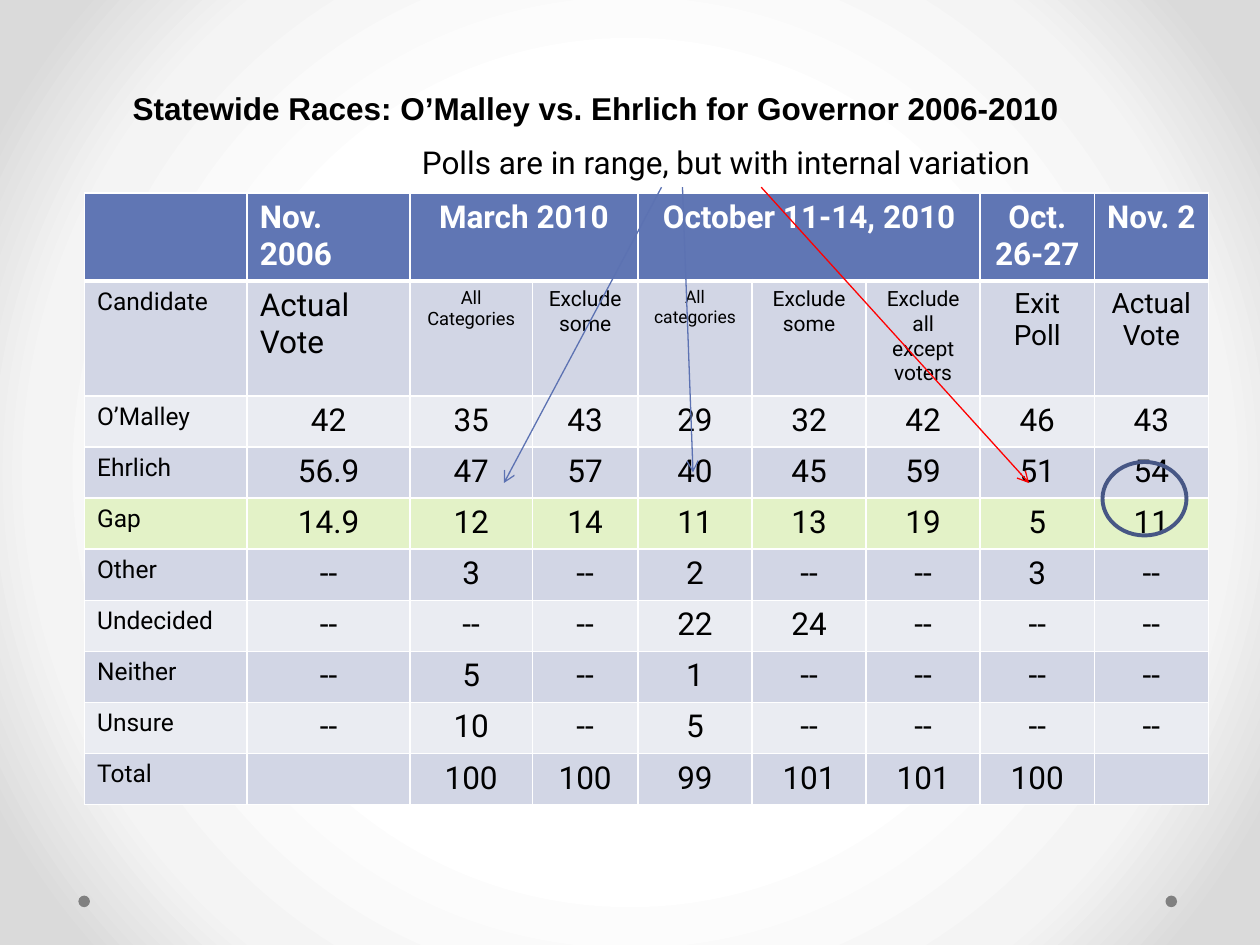
from lxml import etree
from pptx import Presentation
from pptx.dml.color import RGBColor
from pptx.enum import shapes, text
from pptx.oxml import ns, parse_xml
from pptx.util import Pt

BLACK = RGBColor(0x00, 0x00, 0x00)
WHITE = RGBColor(0xFF, 0xFF, 0xFF)
GREY = RGBColor(0x80, 0x80, 0x80)
HEADER = RGBColor(0x60, 0x76, 0xB4)
BAND_DARK = RGBColor(0xD2, 0xD6, 0xE5)
BAND_LIGHT = RGBColor(0xEA, 0xEC, 0xF2)
GAP_GREEN = RGBColor(0xE3, 0xF2, 0xC7)
BLUE = RGBColor(0x5C, 0x72, 0xB2)
RED = RGBColor(0xFF, 0x00, 0x00)
NAVY = RGBColor(0x47, 0x57, 0x85)

LEFT, CENTER = text.PP_ALIGN.LEFT, text.PP_ALIGN.CENTER

COLUMN_WIDTHS = [93, 93, 70, 60.3] + [65.2] * 5
ROW_HEIGHTS = [49.4, 65.6] + [29.2] * 8
HEADINGS = ["", "Nov. 2006", "March 2010", "", "October 11-14, 2010", "", "",
            "Oct. 26-27", "Nov. 2"]
SUBHEADINGS = ["Candidate", "Actual\nVote", "All Categories", "Exclude some",
               "All categories", "Exclude some", "Exclude all except voters",
               "Exit Poll", "Actual Vote"]
SUBHEADING_SIZES = [14, 18, 10.5, 12, 10, 12, 12, 16, 16]
RESULTS = [
    ["O’Malley", "42", "35", "43", "29", "32", "42", "46", "43"],
    ["Ehrlich", "56.9", "47", "57", "40", "45", "59", "51", "54"],
    ["Gap", "14.9", "12", "14", "11", "13", "19", "5", "11"],
    ["Other", "--", "3", "--", "2", "--", "--", "3", "--"],
    ["Undecided", "--", "--", "--", "22", "24", "--", "--", "--"],
    ["Neither", "--", "5", "--", "1", "--", "--", "--", "--"],
    ["Unsure", "--", "10", "--", "5", "--", "--", "--", "--"],
    ["Total", "", "100", "100", "99", "101", "101", "100", ""],
]


def write(frame, words, size=18, font="Roboto", color=BLACK, bold=False, align=LEFT):
    frame.text = words
    for para in frame.paragraphs:
        para.alignment = align
        for span in para.runs:
            span.font.size = Pt(size)
            span.font.name = font
            span.font.color.rgb = color
            span.font.bold = bold


def add_text(page, left, top, width, height, words, wrap=True, inset=3.6, **style):
    box = page.shapes.add_textbox(Pt(left), Pt(top), Pt(width), Pt(height))
    frame = box.text_frame
    frame.word_wrap = wrap
    frame.margin_top = Pt(inset)
    write(frame, words, **style)


def add_ellipse(page, left, top, width, height, fill=None, line=None):
    ellipse = page.shapes.add_shape(shapes.MSO_SHAPE.OVAL, Pt(left), Pt(top),
                                    Pt(width), Pt(height))
    ellipse.shadow.inherit = False
    if fill is None:
        ellipse.fill.background()
    else:
        ellipse.fill.solid()
        ellipse.fill.fore_color.rgb = fill
    if line is None:
        ellipse.line.fill.background()
    else:
        ellipse.line.color.rgb = line
        ellipse.line.width = Pt(2.25)


def add_arrow(page, start, end, color):
    arrow = page.shapes.add_connector(shapes.MSO_CONNECTOR.STRAIGHT,
                                      *map(Pt, start + end))
    arrow.line.color.rgb = color
    arrow.line.width = Pt(0.75)
    etree.SubElement(arrow.line._get_or_add_ln(), ns.qn("a:tailEnd"), type="arrow")
    etree.SubElement(arrow._element.spPr, ns.qn("a:effectLst"))


def set_borders(cell, top=1, bottom=1):
    widths = {"L": 1, "R": 1, "T": top, "B": bottom}
    properties = cell._tc.get_or_add_tcPr()
    for place, (side, width) in enumerate(widths.items()):
        properties.insert(place, parse_xml(
            f'<a:ln{side} {ns.nsdecls("a")} w="{Pt(width)}"><a:solidFill>'
            f'<a:srgbClr val="{WHITE}"/></a:solidFill></a:ln{side}>'))


def set_background(page):
    stops = "".join(f'<a:gs pos="{position}000"><a:srgbClr val="{color}"/></a:gs>'
                    for position, color in [(50, "FFFFFF"), (76, "F4F4F4"), (92, "DADADA")])
    page.background.fill.solid()
    solid = page._element.cSld.find(".//" + ns.qn("a:solidFill"))
    solid.getparent().replace(solid, parse_xml(
        f'<a:gradFill {ns.nsdecls("a")} rotWithShape="1"><a:gsLst>{stops}</a:gsLst>'
        '<a:path path="circle"><a:fillToRect l="50000" t="50000" r="50000" b="50000"/>'
        '</a:path></a:gradFill>'))


def row_fill(row, label):
    if row == 0:
        return HEADER
    if label == "Gap":
        return GAP_GREEN
    return BAND_DARK if row % 2 else BAND_LIGHT


def cell_style(row, column):
    if row == 0:
        return dict(color=WHITE, bold=True, align=LEFT if column < 2 else CENTER)
    if row == 1:
        return dict(size=SUBHEADING_SIZES[column], align=LEFT if column < 2 else CENTER)
    return dict(size=14) if column == 0 else dict(align=CENTER)


def add_results_table(page):
    rows = [HEADINGS, SUBHEADINGS] + RESULTS
    table = page.shapes.add_table(
        len(rows), len(COLUMN_WIDTHS), Pt(48.3), Pt(110.2),
        Pt(sum(COLUMN_WIDTHS)), Pt(sum(ROW_HEIGHTS))).table
    table.first_row = table.horz_banding = False
    for column, width in zip(table.columns, COLUMN_WIDTHS):
        column.width = Pt(width)
    for row, height in zip(table.rows, ROW_HEIGHTS):
        row.height = Pt(height)

    for r, values in enumerate(rows):
        for c, value in enumerate(values):
            cell = table.cell(r, c)
            cell.fill.solid()
            cell.fill.fore_color.rgb = row_fill(r, values[0])
            set_borders(cell, top=3 if r == 1 else 1, bottom=3 if r == 0 else 1)
            if value:
                write(cell.text_frame, value, **cell_style(r, c))

    # Poll dates span their subcolumns
    for first, last in [(2, 3), (4, 6)]:
        table.cell(0, first).merge(table.cell(0, last))


def main():
    deck = Presentation()
    deck.slide_width, deck.slide_height = Pt(720), Pt(540)
    page = deck.slides.add_slide(deck.slide_layouts[6])

    # Backdrop and corner dots
    set_background(page)
    for left in (666, 44.8):
        add_ellipse(page, left, 511.8, 6.6, 6.6, fill=GREY)

    # Title, table and remark
    add_text(page, 66, 46, 549, 51,
             "Statewide Races: O’Malley vs. Ehrlich for Governor 2006-2010",
             wrap=False, inset=4.8, font="Arial", bold=True, align=CENTER)
    add_results_table(page)
    add_text(page, 234, 78, 402, 29, "Polls are in range, but with internal variation")

    # Arrows from the remark to the gaps
    add_arrow(page, (390, 107), (396, 270), BLUE)
    add_arrow(page, (378, 107), (288, 276), BLUE)
    add_arrow(page, (435, 107), (588, 276), RED)

    # Ring around the final gap
    add_ellipse(page, 630, 264, 48, 42, line=NAVY)

    deck.save("out.pptx")


if __name__ == "__main__":
    main()
